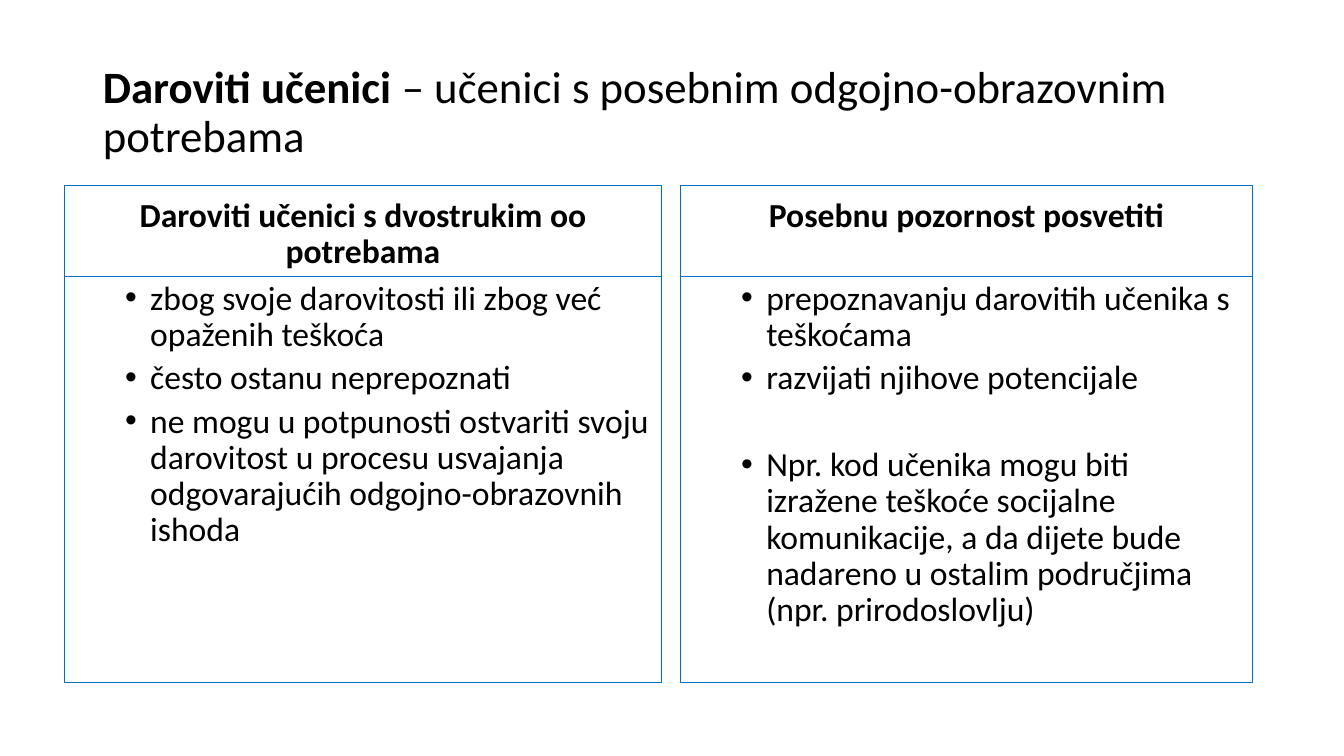
from lxml import etree
from pptx import Presentation
from pptx import util as u
from pptx.dml.color import RGBColor
from pptx.enum import text
from pptx.oxml import ns


def colour(value):
    return RGBColor.from_string(value)


class Slide:
    font = "Calibri"
    ink = "000000"
    border = "0070C0"

    def __init__(self, deck):
        self.page = deck.slides.add_slide(deck.slide_layouts[4])

    def place(self, index, left, top, width, height, anchor):
        holder = self.page.placeholders[index]
        holder.left, holder.top = u.Inches(left), u.Inches(top)
        holder.width, holder.height = u.Inches(width), u.Inches(height)
        frame = holder.text_frame
        frame.word_wrap = True
        frame.auto_size = text.MSO_AUTO_SIZE.NONE
        frame.vertical_anchor = anchor
        return holder

    def outline(self, holder):
        holder.line.color.rgb = colour(self.border)
        holder.line.width = u.Pt(0.75)

    def wording(self, paragraph, words, size, bold=False):
        run = paragraph.add_run()
        run.text = words
        run.font.name = self.font
        run.font.size = u.Pt(size)
        run.font.bold = bold
        run.font.color.rgb = colour(self.ink)

    def spacing(self, paragraph, align, before=0):
        paragraph.alignment = align
        paragraph.line_spacing = 0.9
        paragraph.space_before = u.Pt(before)

    def title(self, emphasis, rest):
        holder = self.place(0, 0.92, 0.4, 11.5, 1.45, text.MSO_ANCHOR.MIDDLE)
        heading = holder.text_frame.paragraphs[0]
        self.spacing(heading, text.PP_ALIGN.LEFT)
        self.wording(heading, emphasis, 32, True)
        self.wording(heading, rest, 32)

    def header(self, index, left, width, words):
        holder = self.place(index, left, 1.84, width, 0.9, text.MSO_ANCHOR.TOP)
        self.outline(holder)
        holder.text_frame.margin_top = u.Inches(0.13)
        heading = holder.text_frame.paragraphs[0]
        self.spacing(heading, text.PP_ALIGN.CENTER)
        self.wording(heading, words, 24, True)

    def bullets(self, index, left, width, points):
        holder = self.place(index, left, 2.74, width, 4.03, text.MSO_ANCHOR.TOP)
        self.outline(holder)
        frame = holder.text_frame
        for number, (before, words) in enumerate(points):
            point = frame.add_paragraph() if number else frame.paragraphs[0]
            point.level = 1
            self.spacing(point, text.PP_ALIGN.LEFT, before)
            self.wording(point, words, 24)
            self.bullet(point)

    def bullet(self, paragraph):
        properties = paragraph._p.get_or_add_pPr()
        properties.set("marL", str(u.Inches(0.75)))
        properties.set("indent", str(u.Inches(-0.25)))
        etree.SubElement(properties, ns.qn("a:buFont"), typeface="Arial")
        etree.SubElement(properties, ns.qn("a:buChar"), char="•")


COLUMNS = [
    (0.64, 5.92, "Daroviti učenici s dvostrukim oo potrebama", [
        (5, "zbog svoje darovitosti ili zbog već opaženih teškoća"),
        (5, "često ostanu neprepoznati"),
        (5, "ne mogu u potpunosti ostvariti svoju darovitost u procesu "
            "usvajanja odgovarajućih odgojno-obrazovnih ishoda"),
    ]),
    (6.75, 5.67, "Posebnu pozornost posvetiti", [
        (5, "prepoznavanju darovitih učenika s teškoćama"),
        (5, "razvijati njihove potencijale"),
        (36, "Npr. kod učenika mogu biti izražene teškoće socijalne "
             "komunikacije, a da dijete bude nadareno u ostalim područjima "
             "(npr. prirodoslovlju)"),
    ]),
]


def main():
    deck = Presentation()
    deck.slide_width, deck.slide_height = u.Inches(13.33), u.Inches(7.5)
    slide = Slide(deck)
    slide.title("Daroviti učenici ",
                "– učenici s posebnim odgojno-obrazovnim potrebama")
    for number, (left, width, heading, points) in enumerate(COLUMNS):
        slide.header(2 * number + 1, left, width, heading)
        slide.bullets(2 * number + 2, left, width, points)
    deck.save("out.pptx")


if __name__ == "__main__":
    main()
